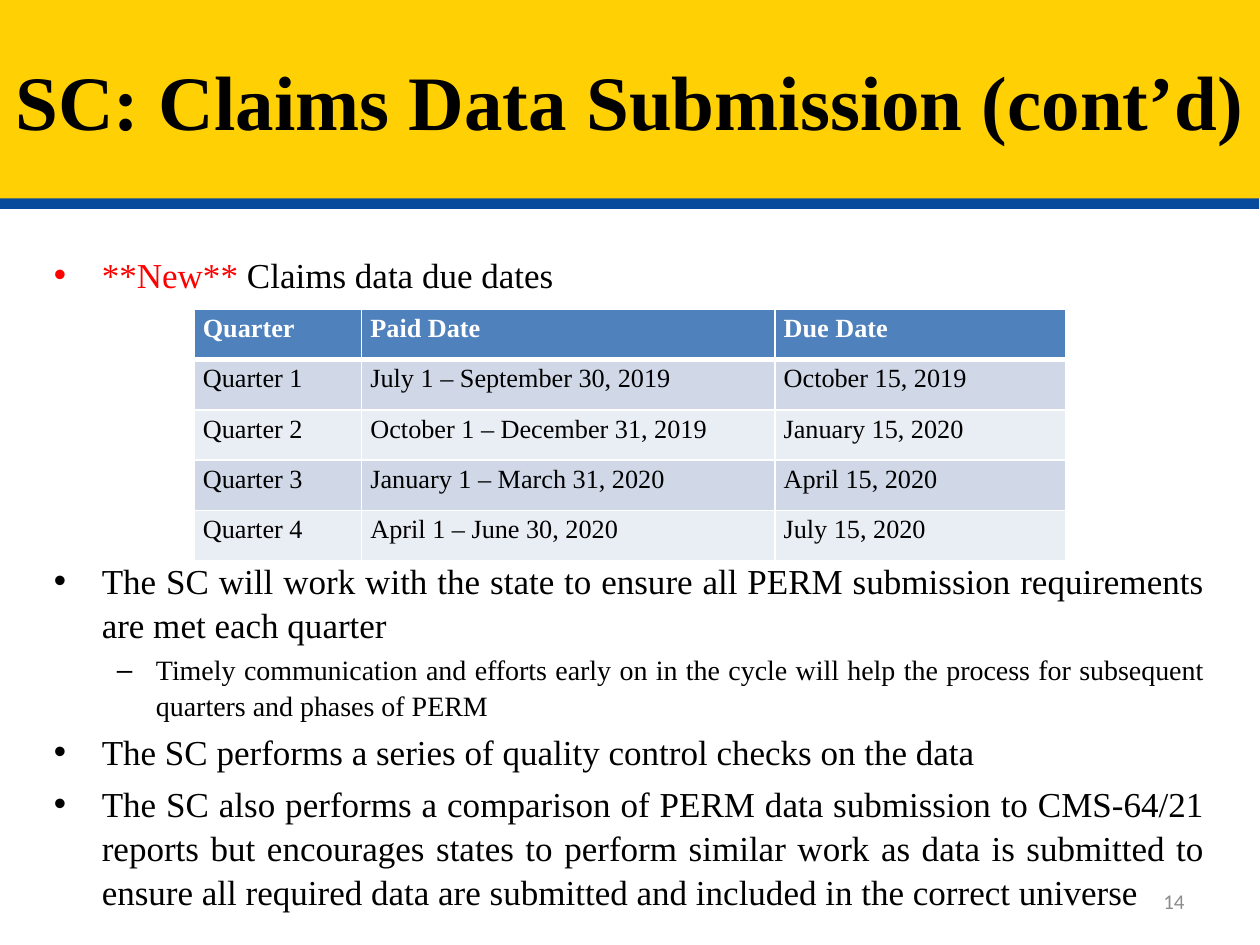
from typing import NamedTuple

from lxml import etree
from pptx import Presentation
from pptx.dml.color import RGBColor
from pptx.enum.shapes import MSO_SHAPE
from pptx.enum.text import MSO_ANCHOR, PP_ALIGN
from pptx.oxml.ns import qn
from pptx.util import Inches, Pt

RECT = MSO_SHAPE.RECTANGLE
MIDDLE = MSO_ANCHOR.MIDDLE
LEFT, CENTER, RIGHT, JUSTIFY = (
    PP_ALIGN.LEFT, PP_ALIGN.CENTER, PP_ALIGN.RIGHT, PP_ALIGN.JUSTIFY)

BLACK = RGBColor(0x00, 0x00, 0x00)
WHITE = RGBColor(0xFF, 0xFF, 0xFF)
RED = RGBColor(0xFF, 0x00, 0x00)
GRAY = RGBColor(0x8C, 0x8C, 0x8C)
GOLD = RGBColor(0xFF, 0xD0, 0x04)
NAVY = RGBColor(0x08, 0x4A, 0x9C)
BLUE = RGBColor(0x4F, 0x81, 0xBD)
BANDS = (RGBColor(0xE9, 0xED, 0xF4), RGBColor(0xD0, 0xD8, 0xE8))

SERIF = "Times New Roman"
SANS = "Calibri"
WIDE, HIGH = 10, 7.5
ROW = 0.4
COLS = (1.33, 3.28, 2.31)
INSET_X, INSET_Y = Inches(0.07), Inches(0.04)


class Box(NamedTuple):
    """Left, top, width and height as shares of the slide."""
    left: float
    top: float
    width: float
    height: float

    def place(self) -> tuple:
        return (Inches(self.left * WIDE), Inches(self.top * HIGH),
                Inches(self.width * WIDE), Inches(self.height * HIGH))


class Level(NamedTuple):
    mark: str
    size: int
    margin: float
    hang: float


class Point(NamedTuple):
    text: str
    level: Level
    gap: float  # space before, in points
    align: PP_ALIGN = JUSTIFY
    lead: str = ""  # opening words in red


MAIN = Level("•", 20, 0.38, 0.38)
SUB = Level("–", 16, 0.81, 0.31)

TITLE = Box(0, 0, 1, 0.21)
BODY = Box(0.033, 0.26, 0.933, 0.684)
NUMBER = Box(0.717, 0.927, 0.233, 0.053)
GRID = Box(0.154, 0.327, sum(COLS) / WIDE, 5 * ROW / HIGH)

POINTS = (
    Point("Claims data due dates", MAIN, 4, LEFT, "**New** "),
    # The wide gap leaves room for the table
    Point("The SC will work with the state to ensure all PERM submission "
          "requirements are met each quarter", MAIN, 149.5),
    Point("Timely communication and efforts early on in the cycle will help "
          "the process for subsequent quarters and phases of PERM", SUB, 3.2),
    Point("The SC performs a series of quality control checks on the data",
          MAIN, 4),
    Point("The SC also performs a comparison of PERM data submission to "
          "CMS-64/21 reports but encourages states to perform similar work as "
          "data is submitted to ensure all required data are submitted and "
          "included in the correct universe", MAIN, 4),
)
DATES = (
    ("Quarter", "Paid Date", "Due Date"),
    ("Quarter 1", "July 1 – September 30, 2019", "October 15, 2019"),
    ("Quarter 2", "October 1 – December 31, 2019", "January 15, 2020"),
    ("Quarter 3", "January 1 – March 31, 2020", "April 15, 2020"),
    ("Quarter 4", "April 1 – June 30, 2020", "July 15, 2020"),
)


def style(para, size: float, color: RGBColor, name: str = SERIF,
          bold: bool = False) -> None:
    font = para.font
    font.size, font.name, font.bold = Pt(size), name, bold
    font.color.rgb = color


def tint(parent, color: RGBColor) -> None:
    fill = etree.SubElement(parent, qn("a:solidFill"))
    etree.SubElement(fill, qn("a:srgbClr"), val=str(color))


def inset(area) -> None:
    area.margin_left = area.margin_right = INSET_X
    area.margin_top = area.margin_bottom = INSET_Y


def add_title(slide, text: str) -> None:
    band = slide.shapes.add_shape(RECT, *TITLE.place())
    band.fill.solid()
    band.fill.fore_color.rgb = GOLD
    band.line.fill.background()
    # Hard blue shadow that forms the stripe under the band
    band.shadow.inherit = False
    effects = band.fill._xPr.find(qn("a:effectLst"))
    shade = etree.SubElement(effects, qn("a:outerShdw"), dist=str(Pt(6)),
                             dir=str(94 * 60000), algn="ctr", rotWithShape="0")
    etree.SubElement(shade, qn("a:srgbClr"), val=str(NAVY))
    frame = band.text_frame
    inset(frame)
    frame.word_wrap = True
    frame.vertical_anchor = MIDDLE
    para = frame.paragraphs[0]
    para.text, para.alignment = text, CENTER
    style(para, 44, BLACK, bold=True)


def add_point(para, point: Point) -> None:
    level = point.level
    para.alignment = point.align
    para.level = int(level is SUB)
    para.space_before = Pt(point.gap)
    para.line_spacing = 1.05
    props = para._p.get_or_add_pPr()
    props.set("marL", str(Inches(level.margin)))
    props.set("indent", str(-Inches(level.hang)))
    etree.SubElement(props, qn("a:buFont"), typeface="Arial")
    etree.SubElement(props, qn("a:buChar"), char=level.mark)
    style(para, level.size, BLACK)
    if point.lead:
        lead = para.add_run()
        lead.text = point.lead
        lead.font.color.rgb = RED
    para.add_run().text = point.text


def add_body(slide) -> None:
    frame = slide.shapes.add_textbox(*BODY.place()).text_frame
    frame.word_wrap = True
    for i, point in enumerate(POINTS):
        add_point(frame.add_paragraph() if i else frame.paragraphs[0], point)


def add_cell(cell, text: str, row: int) -> None:
    head = row == 0
    inset(cell)
    para = cell.text_frame.paragraphs[0]
    para.text = text
    style(para, 15, WHITE if head else BLACK, bold=head)
    # Borders must stand before the fill
    props = cell._tc.get_or_add_tcPr()
    thick = {"lnT": 3 if row == 1 else 1, "lnB": 3 if head else 1}
    for side in ("lnL", "lnR", "lnT", "lnB"):
        line = etree.SubElement(props, qn(f"a:{side}"),
                                w=str(Pt(thick.get(side, 1))))
        tint(line, WHITE)
    cell.fill.solid()
    cell.fill.fore_color.rgb = BLUE if head else BANDS[row % 2]


def add_dates(slide) -> None:
    table = slide.shapes.add_table(
        len(DATES), len(COLS), *GRID.place()).table
    for col, width in zip(table.columns, COLS):
        col.width = Inches(width)
    for i, row in enumerate(DATES):
        table.rows[i].height = Inches(ROW)
        for j, text in enumerate(row):
            add_cell(table.cell(i, j), text, i)


def add_number(slide, text: str) -> None:
    frame = slide.shapes.add_textbox(*NUMBER.place()).text_frame
    frame.word_wrap = True
    frame.vertical_anchor = MIDDLE
    para = frame.paragraphs[0]
    para.text, para.alignment = text, RIGHT
    style(para, 12, GRAY, SANS)


def main() -> None:
    deck = Presentation()
    deck.slide_width, deck.slide_height = Inches(WIDE), Inches(HIGH)
    slide = deck.slides.add_slide(deck.slide_layouts[6])
    add_body(slide)
    add_title(slide, "SC: Claims Data Submission (cont’d)")
    add_number(slide, "14")
    add_dates(slide)
    deck.save("out.pptx")


if __name__ == "__main__":
    main()
